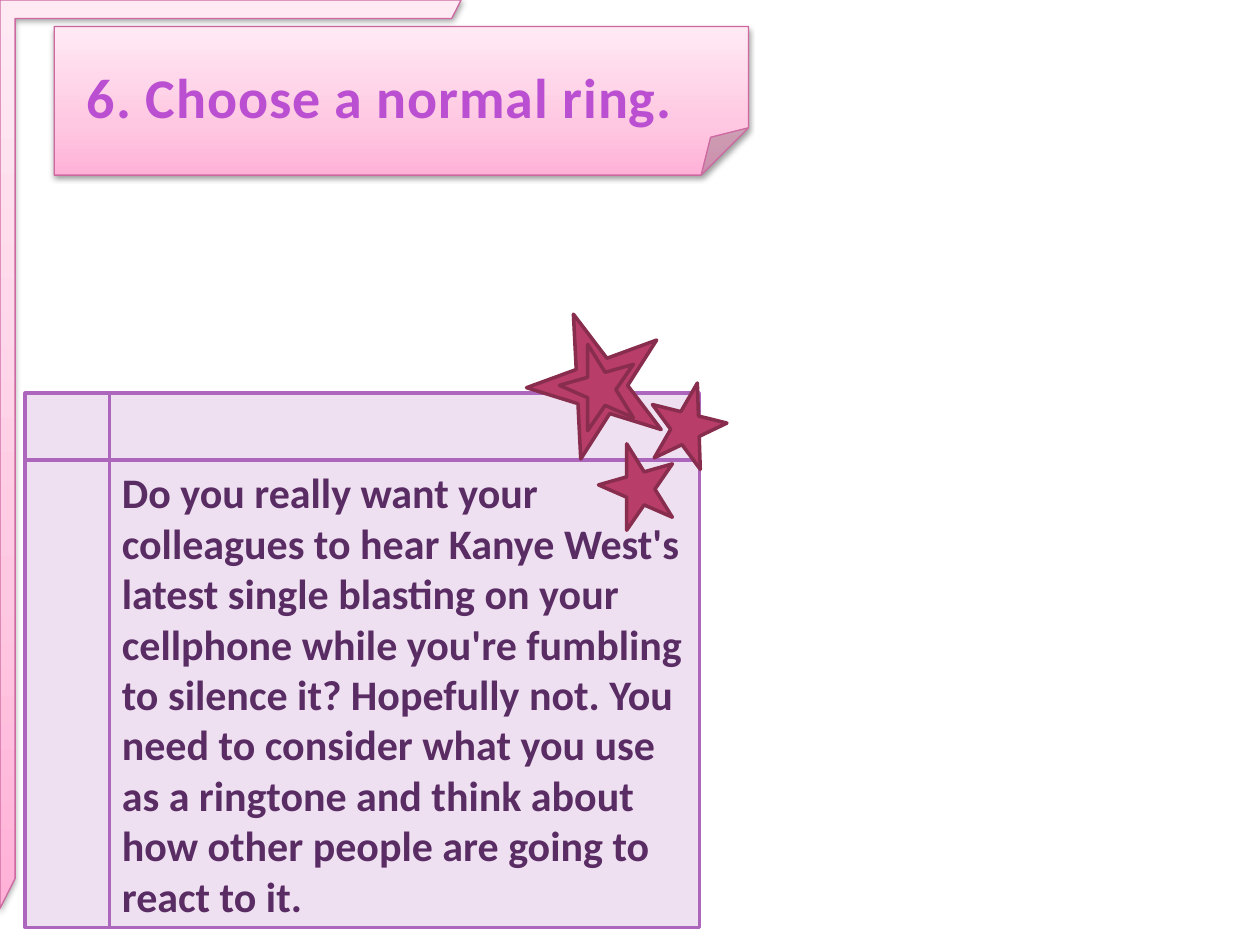
from copy import deepcopy

from lxml.etree import SubElement
from pptx import Presentation
from pptx.dml.color import RGBColor
from pptx.enum.shapes import MSO_SHAPE as Shape
from pptx.enum.text import MSO_ANCHOR as Anchor, MSO_AUTO_SIZE as AutoSize, PP_ALIGN as Align
from pptx.oxml.ns import qn
from pptx.util import Inches, Pt

TITLE = "6. Choose a normal ring."
BODY = (
    "Do you really want your colleagues to hear Kanye West's latest single "
    "blasting on your cellphone while you're fumbling to silence it? "
    "Hopefully not. You need to consider what you use as a ringtone and "
    "think about how other people are going to react to it."
)
STARS = [
    ((4.19, 2.46, 1.1, 1.1), 339.9),
    ((4.76, 3.51, 0.61, 0.66), 344.1),
    ((5.15, 3.03, 0.61, 0.66), 14),
    ((4.45, 2.72, 0.61, 0.66), 344.1),
]
FONT = "Calibri"
PINK_LINE = RGBColor(0xCD, 0x68, 0xA1)
LILAC = RGBColor(0xEE, 0xE0, 0xF1)
LILAC_LINE = RGBColor(0xAC, 0x66, 0xBB)
PLUM = RGBColor(0x5A, 0x2C, 0x64)
BERRY = RGBColor(0xB8, 0x3D, 0x68)
BERRY_LINE = RGBColor(0x88, 0x2D, 0x4D)
PINK_STOPS = [
    (0, RGBColor(0xFF, 0xB1, 0xD7)),
    (0.35, RGBColor(0xFF, 0xC8, 0xE2)),
    (1, RGBColor(0xFF, 0xEA, 0xF4)),
]
TITLE_STOPS = [
    (0.25, RGBColor(0xBB, 0x4F, 0xD2)),
    (1, RGBColor(0x86, 0x35, 0x98)),
]


def set_gradient(fill, stops, angle):
    fill.gradient()
    fill.gradient_angle = angle
    last = fill.gradient_stops[1]._gs
    for _ in stops[2:]:
        last.addnext(deepcopy(last))
    for stop, (position, color) in zip(fill.gradient_stops, stops):
        stop.position = position
        stop.color.rgb = color


def add_shape(slide, kind, box, line, width, fill=None, rotation=0):
    shape = slide.shapes.add_shape(kind, *map(Inches, box))
    shape.rotation = rotation
    shape.line.color.rgb = line
    shape.line.width = Pt(width)
    shape.shadow.inherit = False
    if fill is not None:
        shape.fill.solid()
        shape.fill.fore_color.rgb = fill
    return shape


def add_pink_shape(slide, kind, box, adjustments):
    shape = add_shape(slide, kind, box, PINK_LINE, 0.75)
    set_gradient(shape.fill, PINK_STOPS, 90)
    properties = shape._element.spPr
    guides = properties.find(qn("a:prstGeom")).get_or_add_avLst()
    for guide in list(guides):
        guides.remove(guide)
    for name, value in adjustments.items():
        SubElement(guides, qn("a:gd"), name=name, fmla=f"val {round(value * 100000)}")
    effects = properties.find(qn("a:effectLst"))
    shadow = SubElement(effects, qn("a:outerShdw"), blurRad=str(Pt(3.1)),
                        dist=str(Pt(1.6)), dir="5400000", rotWithShape="0")
    color = SubElement(shadow, qn("a:srgbClr"), val="000000")
    SubElement(color, qn("a:alpha"), val="38000")
    return shape


def write_text(shape, text, size, wrap, color=None, stops=None, spacing=None):
    frame = shape.text_frame
    frame.word_wrap = wrap
    frame.auto_size = AutoSize.SHAPE_TO_FIT_TEXT
    frame.vertical_anchor = Anchor.MIDDLE
    paragraph = frame.paragraphs[0]
    paragraph.alignment = Align.LEFT
    run = paragraph.add_run()
    run.text = text
    run.font.name = FONT
    run.font.size = Pt(size)
    run.font.bold = True
    if stops:
        set_gradient(run.font.fill, stops, 270)
    else:
        run.font.color.rgb = color
    if spacing:
        run.font._element.set("spc", str(int(spacing * 100)))


def main():
    """Build the ringtone advice slide."""
    presentation = Presentation()
    presentation.slide_width = Inches(10)
    presentation.slide_height = Inches(7.5)
    slide = presentation.slides.add_slide(presentation.slide_layouts[5])

    card = add_pink_shape(slide, Shape.FOLDED_CORNER, (0.43, 0.21, 5.51, 1.18), {"adj": 0.318})
    title = slide.shapes.title
    title.left, title.top, title.width, title.height = map(Inches, (0.59, 0.44, 4.89, 0.64))
    write_text(title, TITLE, 32, False, stops=TITLE_STOPS, spacing=0.5)
    card._element.addnext(title._element)

    panel = add_shape(slide, Shape.FLOWCHART_INTERNAL_STORAGE, (0.2, 3.12, 5.35, 4.24),
                      LILAC_LINE, 2, fill=LILAC)
    write_text(panel, BODY, 24, True, color=PLUM)

    for box, rotation in STARS:
        add_shape(slide, Shape.STAR_5_POINT, box, BERRY_LINE, 2, fill=BERRY, rotation=rotation)
    add_pink_shape(slide, Shape.HALF_FRAME, (0, 0, 3.66, 7.21), {"adj1": 0.04, "adj2": 0.033})

    presentation.save("out.pptx")


if __name__ == "__main__":
    main()
